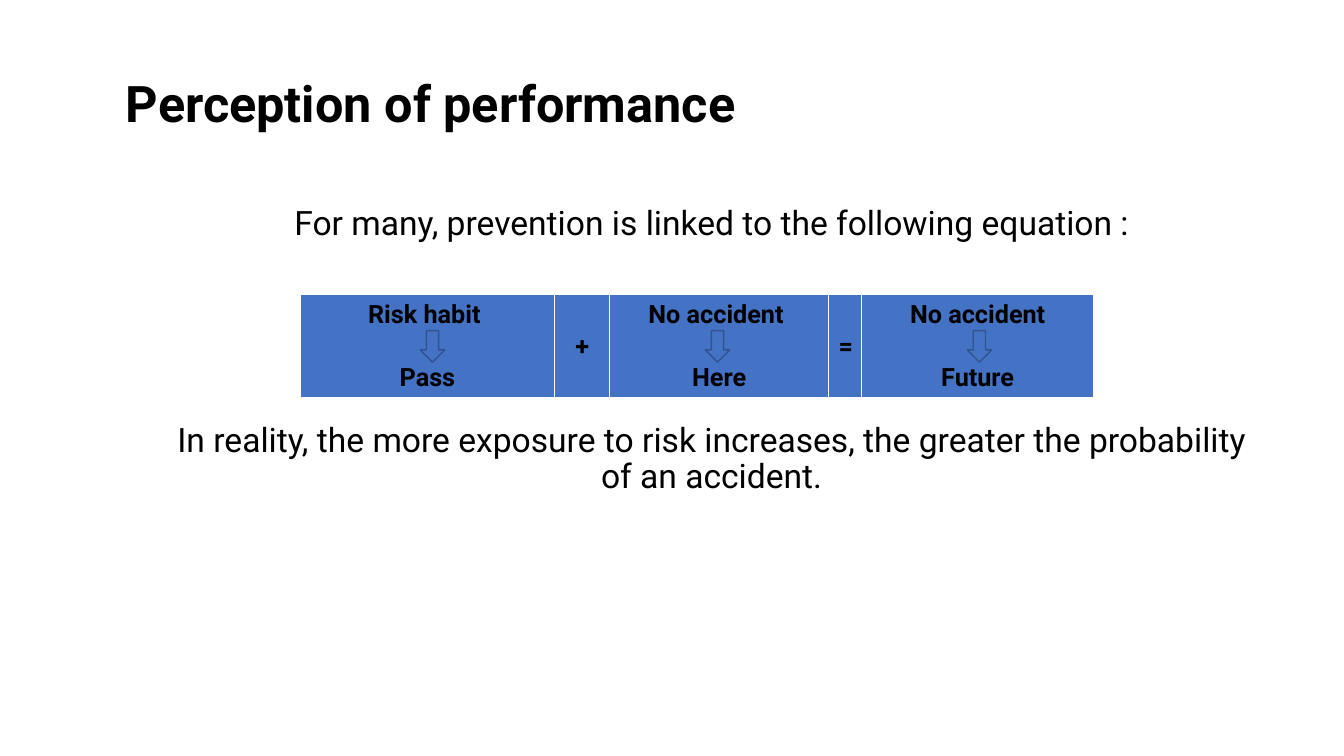
from dataclasses import dataclass

from lxml import etree
from pptx import Presentation
from pptx.dml.color import RGBColor as Color
from pptx.enum.shapes import MSO_SHAPE as Shape
from pptx.enum.text import MSO_ANCHOR as Anchor, PP_ALIGN as Align
from pptx.oxml.ns import qn
from pptx.util import Pt

# Content
TITLE = "Perception of performance"
STATEMENTS = [
    "For many, prevention is linked to the following equation :",
    "In reality, the more exposure to risk increases, the greater the probability of an accident.",
]
# Each column: lines of the cell, width, offset of the arrow from the cell centre
EQUATION = [
    (["Risk habit ", "Pass"], 181.5, 3.6),
    (["+"], 39.5, 0),
    (["No accident ", "Here"], 156.25, -1.2),
    (["="], 23.75, 0),
    (["No accident", "Future"], 165.6, 1.2),
]

# Layout in points: left, top, width, height
SLIDE_SIZE = (960, 540)
TITLE_BOX = (82.8, 23.75, 828, 104.4)
BODY_BOX = (77, 144, 828, 342.7)
BODY_INDENT = 41.75
EQUATION_GAP = 129
TABLE_LEFT, TABLE_TOP, ROW_HEIGHT = 214.6, 210.25, 74
ARROW_TOP, ARROW_WIDTH, ARROW_HEIGHT = 236.2, 17.5, 22.5
ARROW_GAP = 24


@dataclass(frozen=True)
class Theme:
    font: str = "Roboto"
    text: Color = Color(0, 0, 0)
    blue: Color = Color(0x44, 0x72, 0xC4)
    outline: Color = Color(0x31, 0x53, 0x8F)
    border: str = "FFFFFF"
    title_size: int = 36
    body_size: int = 24
    cell_size: int = 18


theme = Theme()


def write(text_frame, lines, size, bold=False, align=Align.CENTER, gap=0, spacing=None):
    text_frame.text = "\n".join(lines)
    for index, paragraph in enumerate(text_frame.paragraphs):
        paragraph.alignment = align
        paragraph.line_spacing = spacing
        if index:
            paragraph.space_before = Pt(gap)
        for run in paragraph.runs:
            run.font.name = theme.font
            run.font.size = Pt(size)
            run.font.bold = bold
            run.font.color.rgb = theme.text


def add_text_frame(slide, box):
    text_frame = slide.shapes.add_textbox(*map(Pt, box)).text_frame
    text_frame.word_wrap = True
    return text_frame


def add_borders(cell):
    properties = cell._tc.get_or_add_tcPr()
    for side, width in (("L", 1), ("R", 1), ("T", 1), ("B", 3)):
        line = etree.SubElement(properties, qn(f"a:ln{side}"), w=str(Pt(width)))
        fill = etree.SubElement(line, qn("a:solidFill"))
        etree.SubElement(fill, qn("a:srgbClr"), val=theme.border)


def add_arrow(slide, center):
    arrow = slide.shapes.add_shape(
        Shape.DOWN_ARROW, Pt(center - ARROW_WIDTH / 2), Pt(ARROW_TOP),
        Pt(ARROW_WIDTH), Pt(ARROW_HEIGHT))
    arrow.shadow.inherit = False
    arrow.fill.solid()
    arrow.fill.fore_color.rgb = theme.blue
    arrow.line.color.rgb = theme.outline
    arrow.line.width = Pt(1)


def add_equation(slide):
    total_width = sum(width for _, width, _ in EQUATION)
    table = slide.shapes.add_table(
        1, len(EQUATION), Pt(TABLE_LEFT), Pt(TABLE_TOP),
        Pt(total_width), Pt(ROW_HEIGHT)).table
    table.first_row = table.horz_banding = False
    left = TABLE_LEFT
    for index, (lines, width, arrow_offset) in enumerate(EQUATION):
        table.columns[index].width = Pt(width)
        cell = table.cell(0, index)
        cell.vertical_anchor = Anchor.MIDDLE
        add_borders(cell)
        cell.fill.solid()
        cell.fill.fore_color.rgb = theme.blue
        write(cell.text_frame, lines, theme.cell_size, bold=True, gap=ARROW_GAP)
        if len(lines) > 1:
            add_arrow(slide, left + width / 2 + arrow_offset)
        left += width


def main():
    presentation = Presentation()
    presentation.slide_width, presentation.slide_height = map(Pt, SLIDE_SIZE)
    slide = presentation.slides.add_slide(presentation.slide_layouts[6])

    # Title
    title = add_text_frame(slide, TITLE_BOX)
    title.vertical_anchor = Anchor.MIDDLE
    write(title, [TITLE], theme.title_size, bold=True, align=Align.LEFT, spacing=0.9)

    # Statements above and below the equation
    body = add_text_frame(slide, BODY_BOX)
    body.margin_left = Pt(BODY_INDENT)
    write(body, STATEMENTS, theme.body_size, gap=EQUATION_GAP, spacing=0.9)

    # Equation table with its arrows
    add_equation(slide)
    presentation.save("out.pptx")


if __name__ == "__main__":
    main()
